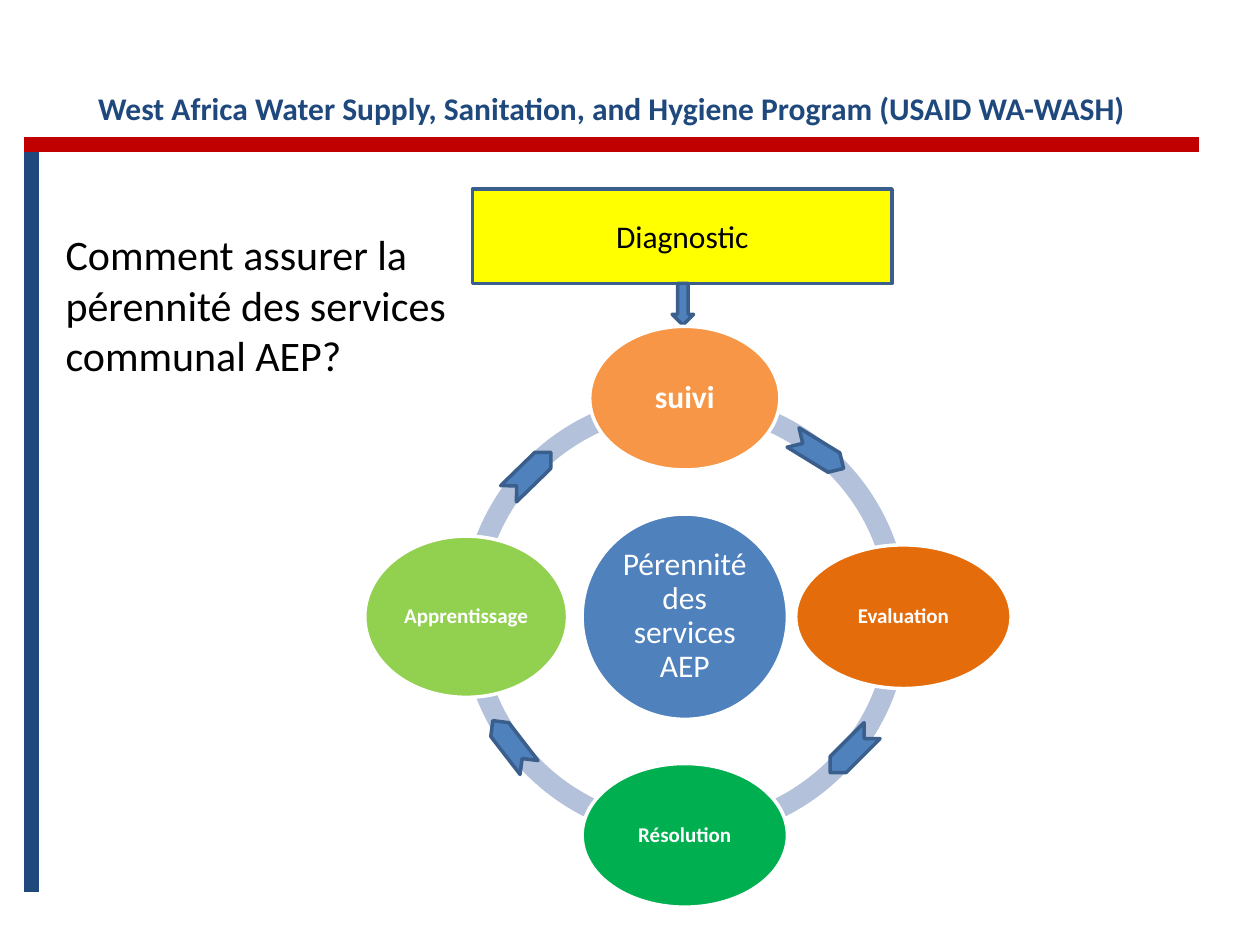
import math
from lxml import etree
from pptx import Presentation
from pptx.dml.color import RGBColor
from pptx.enum.shapes import MSO_CONNECTOR, MSO_SHAPE
from pptx.enum.text import MSO_ANCHOR, MSO_AUTO_SIZE, PP_ALIGN
from pptx.oxml.ns import qn
from pptx.util import Inches, Pt

STRAIGHT = MSO_CONNECTOR.STRAIGHT
RECT, OVAL, ARC = MSO_SHAPE.RECTANGLE, MSO_SHAPE.OVAL, MSO_SHAPE.BLOCK_ARC
CHEVRON, DOWN = MSO_SHAPE.CHEVRON, MSO_SHAPE.DOWN_ARROW
LEFT, CENTER = PP_ALIGN.LEFT, PP_ALIGN.CENTER
TOP, MIDDLE = MSO_ANCHOR.TOP, MSO_ANCHOR.MIDDLE
NO_FIT = MSO_AUTO_SIZE.NONE

COLORS = {
    "navy": "1F497D", "red": "C00000", "ring": "B3C1DB", "blue": "4F81BD",
    "edge": "3A5F8C", "white": "FFFFFF", "black": "000000", "yellow": "FFFF00",
    "peach": "F79646", "orange": "E46C0A", "green": "00B050", "lime": "92D050",
}
NODES = [
    ("suivi", 18, "peach", 1.51, 1.14),
    ("Evaluation", 12, "orange", 1.71, 1.14),
    ("Résolution", 12, "green", 1.63, 1.14),
    ("Apprentissage", 12, "lime", 1.61, 1.28),
]
CHEVRONS = [
    (1.06, -1.3, 31.5), (1.32, 1.07, 135),
    (-1.38, 1.01, 232.3), (-1.23, -1.14, 315.8),
]


def rgb(name):
    """Return the named colour."""
    return RGBColor.from_string(COLORS[name])


def write(shape, text, size, color, bold=False, align=CENTER,
          anchor=MIDDLE, pad=(0.1, 0.05), gap=1.0):
    """Put one formatted paragraph in a shape."""
    frame = shape.text_frame
    x, y = map(Inches, pad)
    form = {"word_wrap": True, "auto_size": NO_FIT, "vertical_anchor": anchor,
            "margin_left": x, "margin_right": x,
            "margin_top": y, "margin_bottom": y}
    for key, value in form.items():
        setattr(frame, key, value)
    para = frame.paragraphs[0]
    para.text = text
    para.alignment = align
    para.line_spacing = gap
    form = {"name": "Calibri", "size": Pt(size), "bold": bold}
    for key, value in form.items():
        setattr(para.font, key, value)
    para.font.color.rgb = rgb(color)


def draw(slide, kind, box, fill, edge=None):
    """Add a flat preset shape in a box."""
    shape = slide.shapes.add_shape(kind, *map(Inches, box))
    shape.shadow.inherit = False
    shape.fill.solid()
    shape.fill.fore_color.rgb = rgb(fill)
    if edge:
        shape.line.color.rgb = rgb(edge)
        shape.line.width = Pt(2)
    else:
        shape.line.fill.background()
    return shape


def center(x, y, wide, high):
    """Return the box around a midpoint."""
    return x - wide / 2, y - high / 2, wide, high


def rule(slide, ends, color):
    """Add a thick straight line."""
    line = slide.shapes.add_connector(STRAIGHT, *map(Inches, ends))
    line.line.color.rgb = rgb(color)
    line.line.width = Pt(8.5)
    etree.SubElement(line._element.spPr, qn("a:effectLst"))


def add_head(slide, box):
    """Add the page rules and the program name."""
    rule(slide, (0.25, 1.17, 0.25, 7.08), "navy")
    rule(slide, (0.19, 1.15, 9.52, 1.15), "red")
    name = slide.shapes.add_textbox(*map(Inches, box))
    write(name, "West Africa Water Supply, Sanitation, and Hygiene Program "
          "(USAID WA-WASH)", 18, "navy", True, anchor=TOP, pad=(0.04, 0.04))


def add_title(slide, box):
    """Place the question in the title placeholder."""
    title = slide.shapes.title
    for key, value in zip(("left", "top", "width", "height"), box):
        setattr(title, key, Inches(value))
    write(title, "Comment assurer la pérennité des services communal AEP?",
          24, "black", align=LEFT)


def add_start(slide, box):
    """Add the diagnostic box and its arrow."""
    left, top, wide, high = box
    start = draw(slide, RECT, box, "yellow", "edge")
    write(start, "Diagnostic", 18, "black")
    draw(slide, DOWN, (left + wide / 2 - 0.08, top + high, 0.17, 0.33),
         "blue", "edge")


def add_cycle(slide, box):
    """Add the ring, its hub, four nodes and four chevrons."""
    left, top, wide, high = box
    x, y = left + wide / 2, top + high / 2
    for turn in range(4):
        arc = draw(slide, ARC, box, "ring")
        ends = (turn * 54, (turn + 1) % 4 * 54, 0.046)
        for index, value in enumerate(ends):
            arc.adjustments[index] = value
    hub = draw(slide, OVAL, center(x, y, 1.63, 1.63), "blue", "white")
    write(hub, "Pérennité des services AEP", 18, "white",
          pad=(0.02, 0.02), gap=0.9)
    reach = wide / 2 - 0.04
    for turn, (text, size, fill, w, h) in enumerate(NODES):
        angle = math.radians(turn * 90 - 90)
        spot = x + reach * math.cos(angle), y + reach * math.sin(angle)
        node = draw(slide, OVAL, center(*spot, w, h), fill, "white")
        write(node, text, size, "white", True, pad=(0, 0), gap=0.9)
    for dx, dy, angle in CHEVRONS:
        mark = draw(slide, CHEVRON, center(x + dx, y + dy, 0.47, 0.18),
                    "blue", "edge")
        mark.rotation = angle


def main():
    """Build and save the slide."""
    deck = Presentation()
    deck.slide_width, deck.slide_height = Inches(10), Inches(7.5)
    slide = deck.slides.add_slide(deck.slide_layouts[5])
    add_head(slide, (0.34, 0.67, 9.03, 0.31))
    add_title(slide, (0.42, 1.5, 3.25, 1.83))
    add_start(slide, (3.75, 1.5, 3.33, 0.75))
    add_cycle(slide, (3.66, 3.12, 3.55, 3.55))
    deck.save("out.pptx")


if __name__ == "__main__":
    main()
